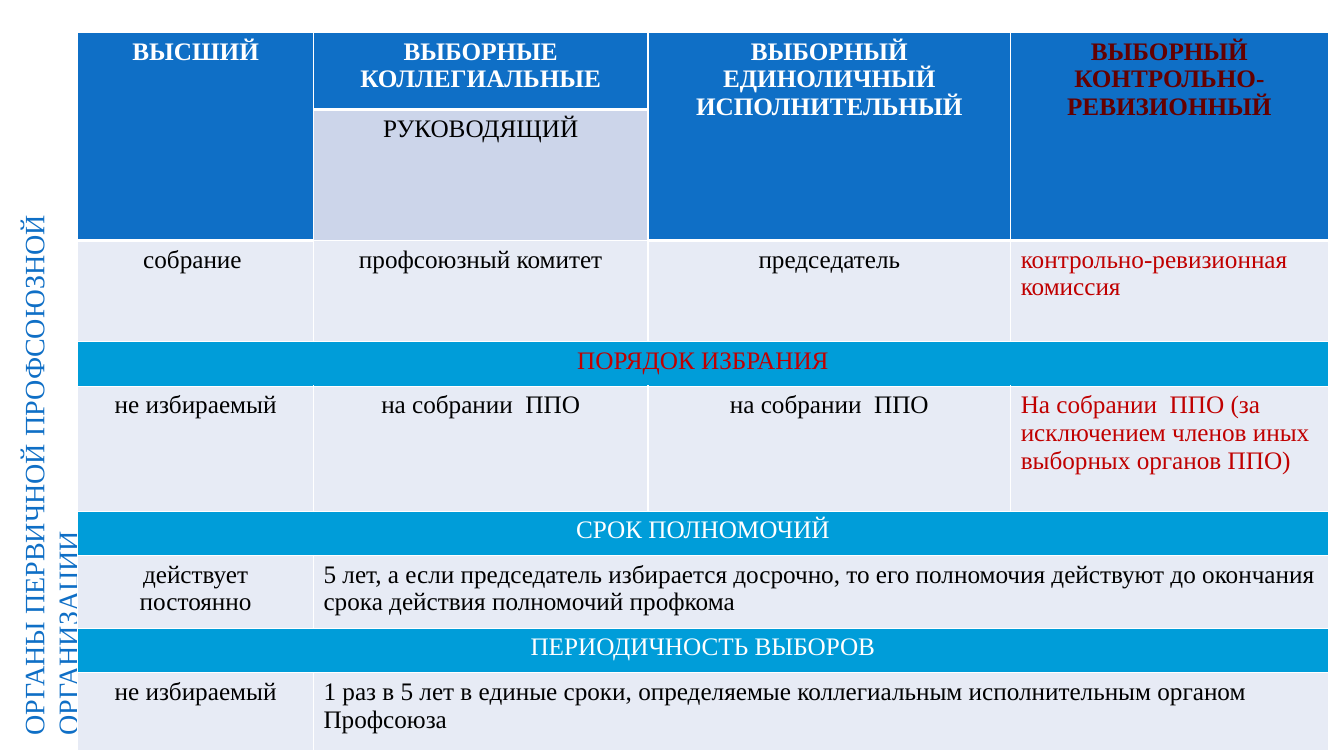
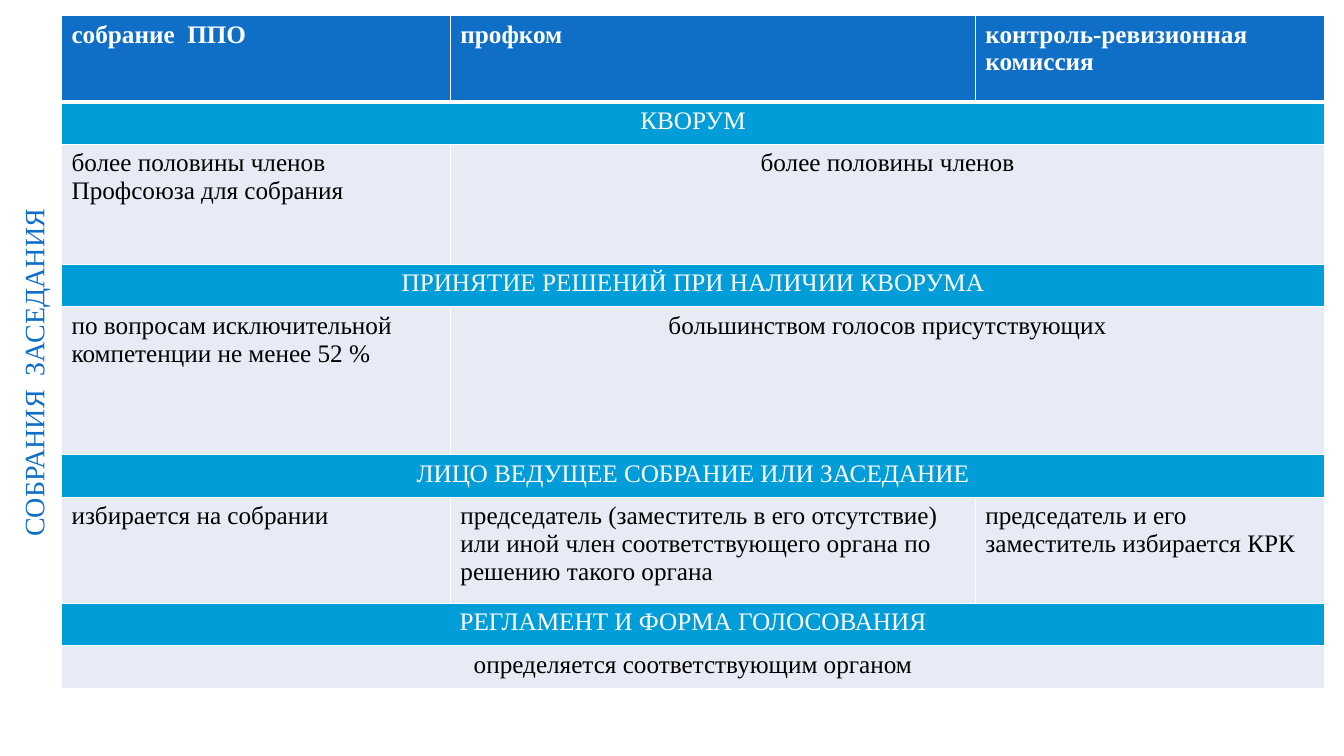
from lxml import etree
from pptx import Presentation
from pptx.dml.color import RGBColor
from pptx.enum.text import MSO_ANCHOR, MSO_AUTO_SIZE, PP_ALIGN
from pptx.oxml.ns import qn
from pptx.util import Cm, Pt

LEFT, CENTER = PP_ALIGN.LEFT, PP_ALIGN.CENTER
TOP = MSO_ANCHOR.TOP
FIXED = MSO_AUTO_SIZE.NONE

BLUE = RGBColor(0x0F, 0x6F, 0xC6)
CYAN = RGBColor(0x00, 0x9D, 0xD9)
PALE = RGBColor(0xE7, 0xEB, 0xF5)
LILAC = RGBColor(0xCC, 0xD5, 0xEA)
WHITE = RGBColor(0xFF, 0xFF, 0xFF)
BLACK = RGBColor(0x00, 0x00, 0x00)
RED = RGBColor(0xC0, 0x00, 0x00)
MAROON = RGBColor(0x64, 0x00, 0x00)
FONT = "Times New Roman"

HEAD = (BLUE, WHITE, True)
HEAD_DARK = (BLUE, MAROON, True)
SUBHEAD = (LILAC, BLACK, False)
BAND = (CYAN, WHITE, False)
BAND_RED = (CYAN, RED, False)
BODY = (PALE, BLACK, False)
BODY_RED = (PALE, RED, False)


def add_run(paragraph, text, size, color, bold):
    run = paragraph.add_run()
    run.text = text
    run.font.name = FONT
    run.font.size = Pt(size)
    run.font.color.rgb = color
    run.font.bold = bold


def add_borders(cell, bottom_width):
    properties = cell._tc.get_or_add_tcPr()
    widths = {"a:lnL": 1, "a:lnR": 1, "a:lnT": 1, "a:lnB": bottom_width}
    for position, (tag, width) in enumerate(widths.items()):
        line = etree.Element(qn(tag), w=str(Pt(width)))
        fill = etree.SubElement(line, qn("a:solidFill"))
        etree.SubElement(fill, qn("a:srgbClr"), val=str(WHITE))
        properties.insert(position, line)


bodies_cells = [
    (0, 0, 2, 1, CENTER, HEAD, "ВЫСШИЙ"),
    (0, 1, 1, 1, CENTER, HEAD, "ВЫБОРНЫЕ КОЛЛЕГИАЛЬНЫЕ"),
    (0, 2, 2, 1, CENTER, HEAD, "ВЫБОРНЫЙ ЕДИНОЛИЧНЫЙ ИСПОЛНИТЕЛЬНЫЙ"),
    (0, 3, 2, 1, CENTER, HEAD_DARK, "ВЫБОРНЫЙ КОНТРОЛЬНО-РЕВИЗИОННЫЙ"),
    (1, 1, 1, 1, CENTER, SUBHEAD, "РУКОВОДЯЩИЙ"),
    (2, 0, 1, 1, CENTER, BODY, "собрание "),
    (2, 1, 1, 1, CENTER, BODY, "профсоюзный комитет"),
    (2, 2, 1, 1, CENTER, BODY, "председатель"),
    (2, 3, 1, 1, LEFT, BODY_RED, "контрольно-ревизионная комиссия"),
    (3, 0, 1, 4, CENTER, BAND_RED, "ПОРЯДОК ИЗБРАНИЯ"),
    (4, 0, 1, 1, CENTER, BODY, "не избираемый"),
    (4, 1, 1, 1, CENTER, BODY, "на собрании  ППО"),
    (4, 2, 1, 1, CENTER, BODY, "на собрании  ППО"),
    (4, 3, 1, 1, LEFT, BODY_RED,
     "На собрании  ППО (за исключением членов иных выборных органов ППО)"),
    (5, 0, 1, 4, CENTER, BAND, "СРОК ПОЛНОМОЧИЙ"),
    (6, 0, 1, 1, CENTER, BODY, "действует постоянно"),
    (6, 1, 1, 3, LEFT, BODY,
     "5 лет, а если председатель избирается досрочно, то его полномочия "
     "действуют до окончания срока действия полномочий профкома"),
    (7, 0, 1, 4, CENTER, BAND, "ПЕРИОДИЧНОСТЬ ВЫБОРОВ"),
    (8, 0, 1, 1, CENTER, BODY, "не избираемый"),
    (8, 1, 1, 3, LEFT, BODY,
     "1 раз в 5 лет в единые сроки, определяемые коллегиальным "
     "исполнительным органом Профсоюза"),
]

meetings_cells = [
    (0, 0, 1, 1, LEFT, HEAD, "собрание  ППО"),
    (0, 1, 1, 1, LEFT, HEAD, "профком"),
    (0, 2, 1, 1, LEFT, HEAD, "контроль-ревизионная комиссия"),
    (1, 0, 1, 3, CENTER, BAND, "КВОРУМ"),
    (2, 0, 1, 1, LEFT, BODY, "более половины членов Профсоюза для собрания"),
    (2, 1, 1, 2, CENTER, BODY, "более половины членов"),
    (3, 0, 1, 3, CENTER, BAND, "ПРИНЯТИЕ РЕШЕНИЙ ПРИ НАЛИЧИИ КВОРУМА"),
    (4, 0, 1, 1, LEFT, BODY,
     "по вопросам исключительной компетенции не менее 52 %"),
    (4, 1, 1, 2, CENTER, BODY, "большинством голосов присутствующих"),
    (5, 0, 1, 3, CENTER, BAND, "ЛИЦО ВЕДУЩЕЕ СОБРАНИЕ ИЛИ ЗАСЕДАНИЕ"),
    (6, 0, 1, 1, LEFT, BODY, "избирается на собрании"),
    (6, 1, 1, 1, LEFT, BODY,
     "председатель (заместитель в его отсутствие) или иной член "
     "соответствующего органа по решению такого органа"),
    (6, 2, 1, 1, LEFT, BODY, "председатель и его заместитель избирается КРК"),
    (7, 0, 1, 3, CENTER, BAND, "РЕГЛАМЕНТ И ФОРМА ГОЛОСОВАНИЯ"),
    (8, 0, 1, 3, CENTER, BODY, "определяется соответствующим органом"),
]

pages = [
    ("ОРГАНЫ ПЕРВИЧНОЙ ПРОФСОЮЗНОЙ ОРГАНИЗАЦИИ", LEFT, 1.96, 0.82,
     [5.94, 8.43, 9.14, 8],
     [1.94, 3.3, 2.55, 1.12, 3.15, 1.12, 1.83, 1.12, 1.96], bodies_cells),
    ("СОБРАНИЯ  ЗАСЕДАНИЯ", CENTER, 1.55, 0.39,
     [9.8, 13.23, 8.8],
     [2.18, 1.07, 3.02, 1.07, 3.73, 1.07, 2.67, 1.07, 1.07], meetings_cells),
]

prs = Presentation()
prs.slide_width, prs.slide_height = Cm(33.87), Cm(19.05)

for heading, heading_align, left, top, widths, heights, cells in pages:
    slide = prs.slides.add_slide(prs.slide_layouts[5])

    title = slide.shapes.title
    title.left, title.top = Cm(-8.53), Cm(8.71)
    title.width, title.height = Cm(18.8), Cm(1.37)
    title.rotation = 270
    frame = title.text_frame
    frame.word_wrap = True
    frame.auto_size = FIXED
    frame.vertical_anchor = TOP
    frame.margin_top, frame.margin_bottom = Cm(0.23), Cm(0)
    frame.paragraphs[0].alignment = heading_align
    add_run(frame.paragraphs[0], heading, 20, BLUE, False)

    table = slide.shapes.add_table(
        len(heights), len(widths), Cm(left), Cm(top),
        Cm(sum(widths)), Cm(sum(heights))).table
    for column, width in zip(table.columns, widths):
        column.width = Cm(width)
    for row, height in zip(table.rows, heights):
        row.height = Cm(height)

    for row, col, row_span, col_span, align, (back, ink, bold), text in cells:
        cell = table.cell(row, col)
        if row_span * col_span > 1:
            cell.merge(table.cell(row + row_span - 1, col + col_span - 1))
        cell.fill.solid()
        cell.fill.fore_color.rgb = back
        if row == 0:
            add_borders(cell, 3)
        paragraph = cell.text_frame.paragraphs[0]
        paragraph.alignment = align
        add_run(paragraph, text, 18, ink, bold)

prs.save("out.pptx")
